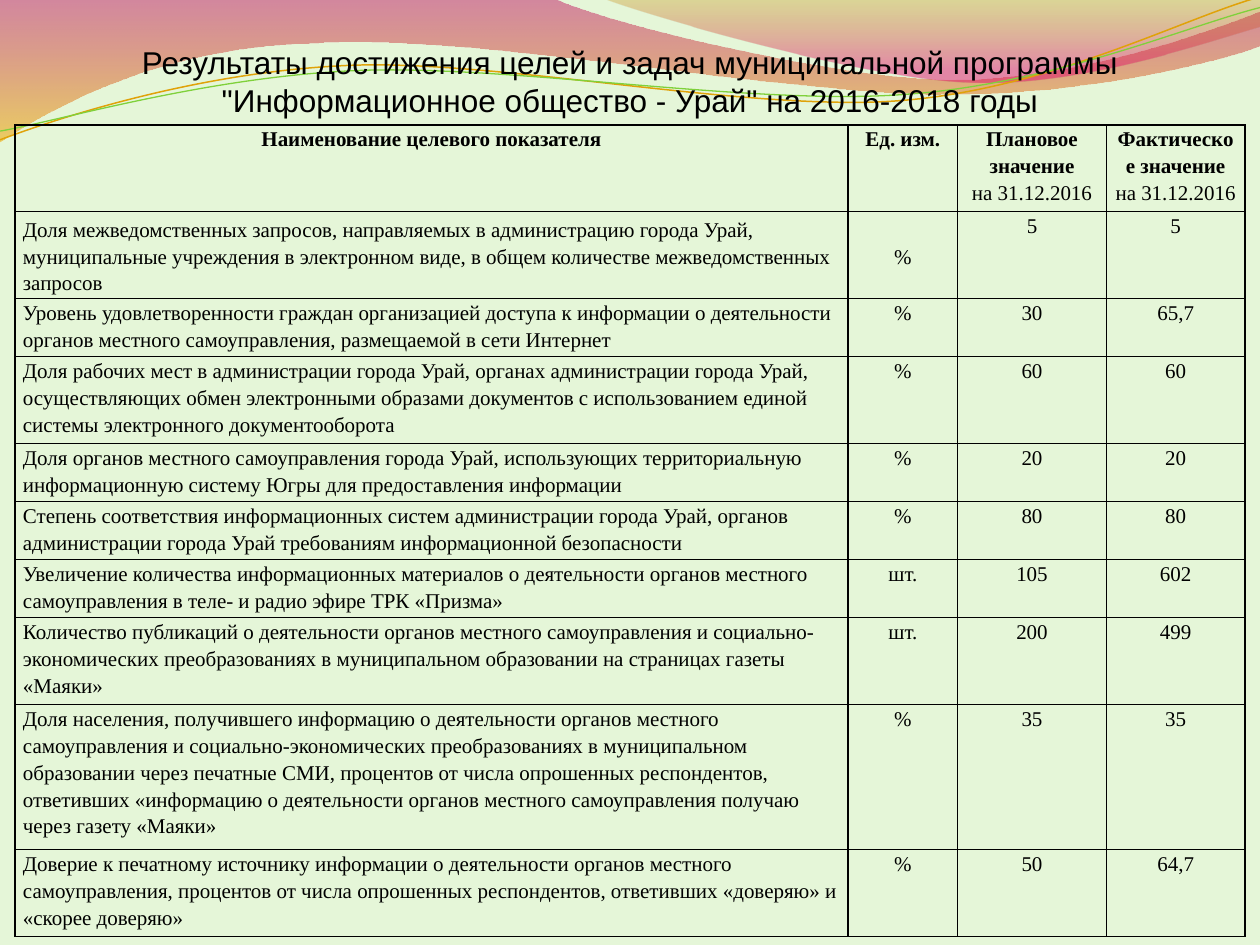
from lxml import etree
from pptx import Presentation
from pptx import util as u
from pptx.dml import color
from pptx.enum import text
from pptx.oxml import ns

Pt = u.Pt
CENTER, LEFT = text.PP_ALIGN.CENTER, text.PP_ALIGN.LEFT

TITLE = ('Результаты достижения целей и задач муниципальной программы '
         '"Информационное общество - Урай" на 2016-2018 годы')
DATE = "на 31.12.2016"
HEADER = ["Наименование целевого показателя", "Ед. изм.",
          f"Плановое значение\n{DATE}", f"Фактическое значение\n{DATE}"]
INDICATORS = [
    ["Доля межведомственных запросов, направляемых в администрацию города Урай, "
     "муниципальные учреждения в электронном виде, в общем количестве "
     "межведомственных запросов", "%", "5", "5"],
    ["Уровень удовлетворенности граждан организацией доступа к информации о "
     "деятельности органов местного самоуправления, размещаемой в сети Интернет",
     "%", "30", "65,7"],
    ["Доля рабочих мест в администрации города Урай, органах администрации города "
     "Урай, осуществляющих обмен электронными образами документов с использованием "
     "единой системы электронного документооборота", "%", "60", "60"],
    ["Доля органов местного самоуправления города Урай, использующих территориальную "
     "информационную систему Югры для предоставления информации", "%", "20", "20"],
    ["Степень соответствия информационных систем администрации города Урай, органов "
     "администрации города Урай требованиям информационной безопасности",
     "%", "80", "80"],
    ["Увеличение количества информационных материалов о деятельности органов местного "
     "самоуправления в теле- и радио эфире ТРК «Призма»", "шт.", "105", "602"],
    ["Количество публикаций о деятельности органов местного самоуправления и "
     "социально-экономических преобразованиях в муниципальном образовании на "
     "страницах газеты «Маяки»", "шт.", "200", "499"],
    ["Доля населения, получившего информацию о деятельности органов местного "
     "самоуправления и социально-экономических преобразованиях в муниципальном "
     "образовании через печатные СМИ, процентов от числа опрошенных респондентов, "
     "ответивших «информацию о деятельности органов местного самоуправления получаю "
     "через газету «Маяки»", "%", "35", "35"],
    ["Доверие к печатному источнику информации о деятельности органов местного "
     "самоуправления, процентов от числа опрошенных респондентов, ответивших "
     "«доверяю» и «скорее доверяю»", "%", "50", "64,7"],
]
COLUMN_WIDTHS = [476, 62.6, 85, 79.2]
ROW_LINES = [3, 3, 2, 3, 2, 2, 2, 3, 5, 3]
LINE_HEIGHT = 16.57

# Each step after the start is a straight line (x, y) or a Bezier curve (6 numbers).
WIDE_WAVE = [(0, 0), (316.8, -0.7), (342.7, 12.2, 478.1, 45.4, 545.8, 45.4),
             (614.2, 45.4, 689.8, 18.7, 720, 6.5), (720.7, 25.9),
             (707.8, 31.7, 626.4, 54.7, 537.1, 54),
             (447.8, 54, 275, 20.2, 185, 24.5),
             (92.9, 25.9, 33.1, 59.8, -0.7, 81.4)]
RIGHT_WAVE = [(344.9, -0.7), (366.5, 7.9, 491, 44.6, 553.7, 46.8),
              (616.3, 49.7, 691.9, 23, 720, 15.1), (720, 0)]
ORANGE_LINE = [(0, 79.9), (34.6, 67, 113.8, 41, 199.4, 37.4),
               (284.4, 33.8, 427, 64.1, 513.4, 57.6),
               (599.8, 51.1, 675.4, 10.8, 718.6, -1.4)]
GREEN_LINE = [(0, 74.9), (33.8, 69.1, 118.1, 43.9, 203.8, 40.3),
              (290.2, 36.7, 429.8, 60.5, 516.2, 54),
              (601.9, 48.2, 677.5, 15.1, 720, 4.3)]


def rgb(value):
    return color.RGBColor.from_string(value)


class Deck:
    ink = "000000"
    title_font, title_size = "Arial", 18
    table_font, table_size = "Times New Roman", 12
    spacing = 1.15

    def __init__(self, width, height, background):
        self.prs = Presentation()
        self.prs.slide_width, self.prs.slide_height = Pt(width), Pt(height)
        self.s = self.prs.slides.add_slide(self.prs.slide_layouts[6])
        self.s.background.fill.solid()
        self.s.background.fill.fore_color.rgb = rgb(background)

    def outline(self, steps, close):
        """Build a freeform, then join each curve's three points into a Bezier."""
        points = [(Pt(x), Pt(y)) for step in steps
                  for x, y in zip(step[::2], step[1::2])]
        builder = self.s.shapes.build_freeform(*points[0])
        builder.add_line_segments(points[1:], close=close)
        sp = builder.convert_to_shape()
        sp.shadow.inherit = False
        segments = iter(list(sp._element.iter(ns.qn("a:lnTo"))))
        for step in steps[1:]:
            first = next(segments)
            if len(step) == 6:
                curve = etree.Element(ns.qn("a:cubicBezTo"))
                first.addprevious(curve)
                for segment in (first, next(segments), next(segments)):
                    curve.append(segment[0])
                    segment.getparent().remove(segment)
        return sp

    def wave(self, steps, stops):
        """Draw a filled wave; stops are (position, colour, opacity percent)."""
        sp = self.outline(steps, True)
        sp.line.fill.background()
        sp.fill.gradient()
        sp.fill.gradient_angle = 270
        for stop, (position, value, _) in zip(sp.fill.gradient_stops, stops):
            stop.position = position
            stop.color.rgb = rgb(value)
        for clr, (_, _, opacity) in zip(sp._element.spPr.iter(ns.qn("a:srgbClr")), stops):
            etree.SubElement(clr, ns.qn("a:alpha"), val=str(opacity * 1000))

    def line(self, steps, value, width):
        sp = self.outline(steps, False)
        sp.fill.background()
        sp.line.color.rgb = rgb(value)
        sp.line.width = Pt(width)

    def format(self, p, font, size, align, bold=False):
        p.alignment = align
        for r in p.runs:
            r.font.name, r.font.size, r.font.bold = font, Pt(size), bold
            r.font.color.rgb = rgb(self.ink)

    def title(self, wording, *box):
        tf = self.s.shapes.add_textbox(*map(Pt, box)).text_frame
        tf.word_wrap = True
        tf.text = wording
        self.format(tf.paragraphs[0], self.title_font, self.title_size, CENTER)

    def border(self, cell, width=1):
        tcPr = cell._tc.get_or_add_tcPr()
        for i, side in enumerate(("lnL", "lnR", "lnT", "lnB")):
            ln = etree.Element(ns.qn(f"a:{side}"), w=str(Pt(width)))
            fill = etree.SubElement(ln, ns.qn("a:solidFill"))
            etree.SubElement(fill, ns.qn("a:srgbClr"), val=self.ink)
            tcPr.insert(i, ln)

    def cell(self, cell, wording, align, header):
        cell.text = wording
        cell.margin_left = cell.margin_right = Pt(4.5)
        cell.margin_top = cell.margin_bottom = 0
        cell.fill.background()
        self.border(cell)
        for i, p in enumerate(cell.text_frame.paragraphs):
            p.line_spacing = self.spacing
            self.format(p, self.table_font, self.table_size, align, header and i == 0)

    def table(self, rows, left, top, widths, heights):
        frame = self.s.shapes.add_table(len(rows), len(widths), Pt(left), Pt(top),
                                        Pt(sum(widths)), Pt(sum(heights)))
        table = frame.table
        table.first_row = table.horz_banding = False
        for column, width in zip(table.columns, widths):
            column.width = Pt(width)
        for i, (row, height) in enumerate(zip(rows, heights)):
            table.rows[i].height = Pt(height)
            for j, wording in enumerate(row):
                align = LEFT if i and j == 0 else CENTER
                self.cell(table.cell(i, j), wording, align, i == 0)
        return table


def main():
    deck = Deck(720, 540, "E5F6D8")
    deck.wave(WIDE_WAVE, [(0, "BD0059", 45), (1, "F0AB00", 55)])
    deck.wave(RIGHT_WAVE, [(0, "C38B00", 30), (0.8, "E1006B", 45)])
    deck.line(ORANGE_LINE, "E0A209", 0.85)
    deck.line(GREEN_LINE, "7FD13B", 0.75)
    deck.title(TITLE, 8.64, 20.9, 702.8, 51)
    table = deck.table([HEADER] + INDICATORS, 8.64, 71.3, COLUMN_WIDTHS,
                       [n * LINE_HEIGHT for n in ROW_LINES])
    for j in (0, 1):
        table.cell(1, j).vertical_anchor = text.MSO_ANCHOR.MIDDLE
    deck.prs.save("out.pptx")


if __name__ == "__main__":
    main()
